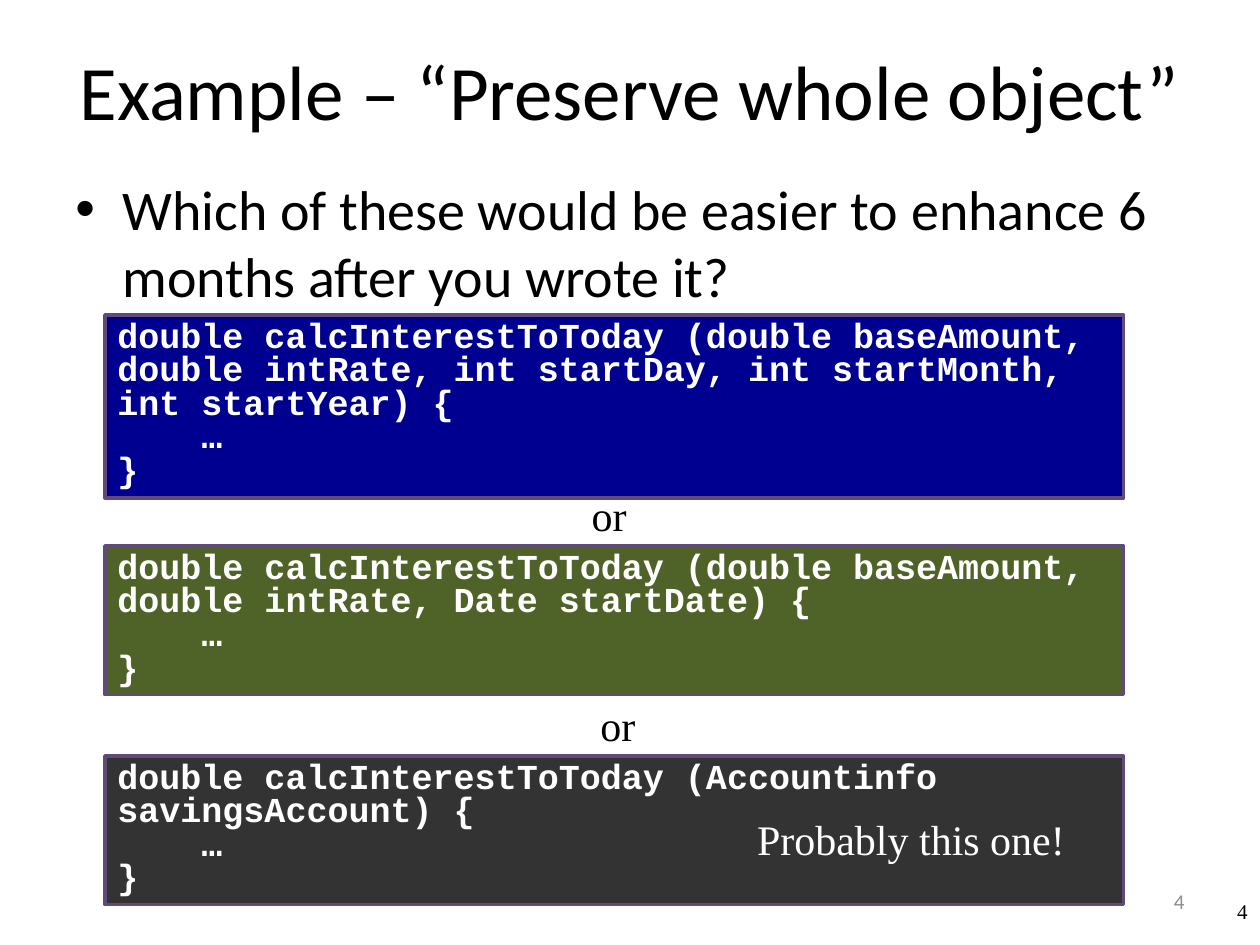
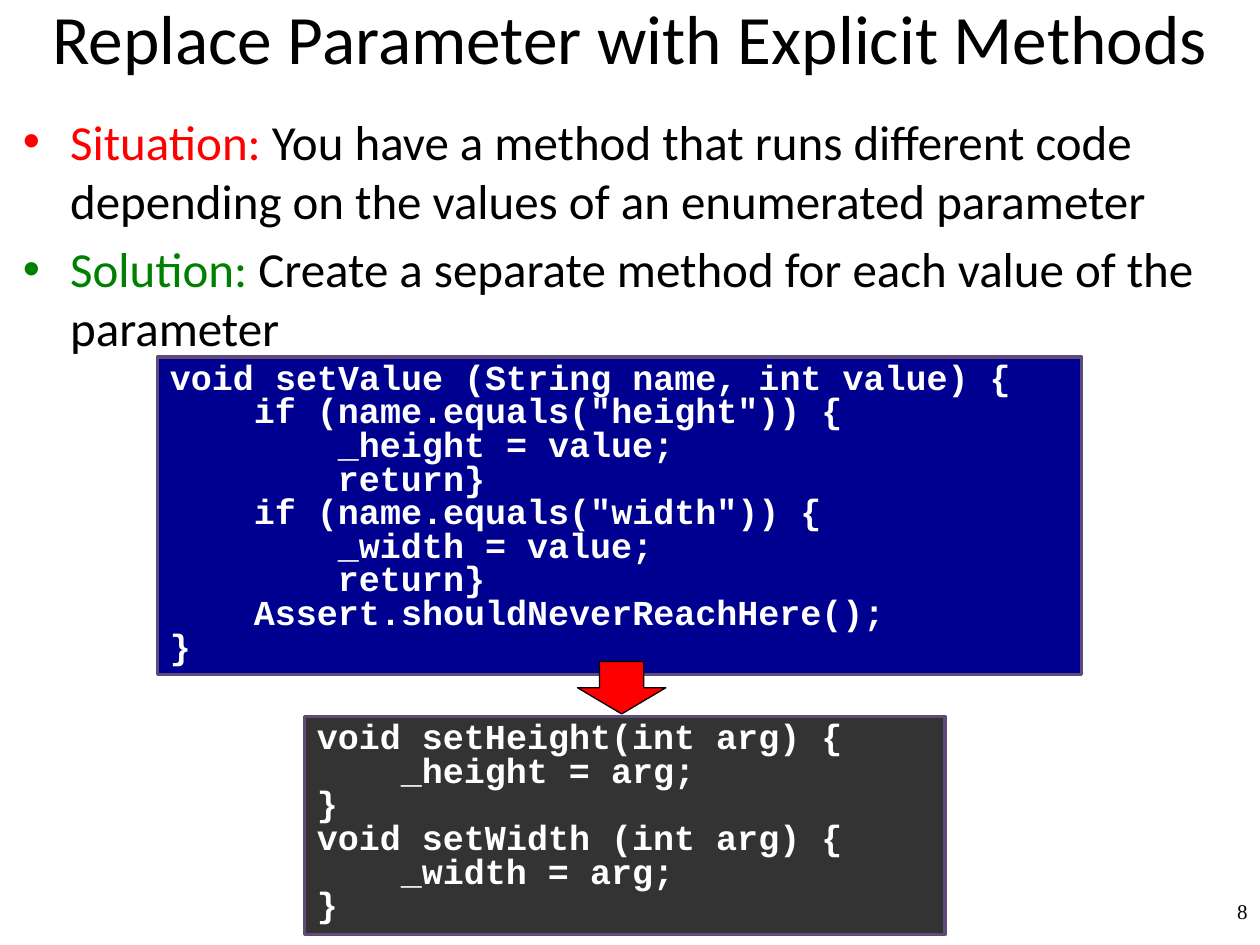
from dataclasses import dataclass

from lxml.etree import SubElement
from pptx import Presentation
from pptx.dml.color import RGBColor
from pptx.enum.shapes import MSO_SHAPE
from pptx.enum.text import MSO_ANCHOR, PP_ALIGN
from pptx.oxml.ns import qn
from pptx.shapes.autoshape import Shape
from pptx.slide import Slide
from pptx.util import Pt

COLORS = {
    "ink": "000000",
    "white": "FFFFFF",
    "page_gray": "8C8C8C",
    "code_border": "5F4A78",
    "blue": "000090",
    "green": "4F6228",
    "charcoal": "333333",
    "situation": "FF0000",
    "solution": "008000",
    "arrow": "FF0000",
}
BODY_FONT = "Calibri"
CODE_FONT = "Courier New"
NOTE_FONT = "Times New Roman"
CODE_SIZE = 20
CODE_INDENT = 48  # four characters of 20 pt code
BULLET_INDENT = 27


@dataclass(frozen=True)
class Box:
    left: float
    top: float
    width: float
    height: float

    def lengths(self) -> tuple[Pt, Pt, Pt, Pt]:
        return Pt(self.left), Pt(self.top), Pt(self.width), Pt(self.height)


@dataclass(frozen=True)
class Label:
    text: str
    box: Box
    size: float
    font: str = NOTE_FONT
    color: str = "ink"
    align: PP_ALIGN = PP_ALIGN.LEFT
    anchor: MSO_ANCHOR = MSO_ANCHOR.TOP
    wrap: bool = True


@dataclass(frozen=True)
class CodeBlock:
    box: Box
    fill: str
    lines: list[tuple[int, str]]  # indent level, code


@dataclass(frozen=True)
class Bullet:
    text: str
    lead: str = ""
    lead_color: str = "ink"


def rgb(name: str) -> RGBColor:
    return RGBColor.from_string(COLORS[name])


def style_font(font, name: str, size: float, color: str, bold: bool = False) -> None:
    font.name, font.size, font.bold = name, Pt(size), bold
    font.color.rgb = rgb(color)


def add_label(slide: Slide, label: Label) -> None:
    frame = slide.shapes.add_textbox(*label.box.lengths()).text_frame
    frame.word_wrap = label.wrap
    frame.vertical_anchor = label.anchor
    paragraph = frame.paragraphs[0]
    paragraph.text = label.text
    paragraph.alignment = label.align
    style_font(paragraph.font, label.font, label.size, label.color)


def add_title(slide: Slide, text: str, box: Box, size: float) -> None:
    add_label(slide, Label(text, box, size, BODY_FONT,
                           align=PP_ALIGN.CENTER, anchor=MSO_ANCHOR.MIDDLE))


def add_page_number(slide: Slide, number: int) -> None:
    add_label(slide, Label(str(number), Box(570, 510, 150, 30), 12, align=PP_ALIGN.RIGHT))


def add_bullets(slide: Slide, bullets: list[Bullet], box: Box, size: float) -> None:
    frame = slide.shapes.add_textbox(*box.lengths()).text_frame
    frame.word_wrap = True
    for index, bullet in enumerate(bullets):
        paragraph = frame.add_paragraph() if index else frame.paragraphs[0]
        paragraph.space_before = Pt(size * 0.2)
        style_font(paragraph.font, BODY_FONT, size, "ink")
        if bullet.lead:
            lead = paragraph.add_run()
            lead.text = bullet.lead
            lead.font.color.rgb = rgb(bullet.lead_color)
        paragraph.add_run().text = bullet.text

        # Hanging bullet in the colour of the lead
        properties = paragraph._p.get_or_add_pPr()
        properties.set("marL", str(Pt(BULLET_INDENT)))
        properties.set("indent", str(-Pt(BULLET_INDENT)))
        bullet_color = SubElement(properties, qn("a:buClr"))
        SubElement(bullet_color, qn("a:srgbClr"), val=COLORS[bullet.lead_color])
        SubElement(properties, qn("a:buFont"), typeface="Arial")
        SubElement(properties, qn("a:buChar"), char="•")
        # The schema wants the default run properties last
        properties.append(properties.find(qn("a:defRPr")))


def add_filled_shape(slide: Slide, preset: MSO_SHAPE, box: Box,
                     fill: str, line: str, line_width: float) -> Shape:
    shape = slide.shapes.add_shape(preset, *box.lengths())
    shape.shadow.inherit = False
    shape.fill.solid()
    shape.fill.fore_color.rgb = rgb(fill)
    shape.line.color.rgb = rgb(line)
    shape.line.width = Pt(line_width)
    return shape


def add_code(slide: Slide, code: CodeBlock) -> None:
    frame = add_filled_shape(slide, MSO_SHAPE.RECTANGLE, code.box,
                             code.fill, "code_border", 2).text_frame
    frame.word_wrap = True
    frame.vertical_anchor = MSO_ANCHOR.TOP
    for index, (level, text) in enumerate(code.lines):
        paragraph = frame.add_paragraph() if index else frame.paragraphs[0]
        paragraph.text = text
        paragraph.alignment = PP_ALIGN.LEFT
        paragraph.line_spacing = 0.8
        paragraph._p.get_or_add_pPr().set("marL", str(Pt(level * CODE_INDENT)))
        style_font(paragraph.font, CODE_FONT, CODE_SIZE, "white", bold=True)


def calc_interest(top: float, height: float, fill: str, parameters: str) -> CodeBlock:
    signature = f"double calcInterestToToday ({parameters}) {{"
    return CodeBlock(Box(60, top, 582, height), fill, [(0, signature), (1, "…"), (0, "}")])


def build_preserve_whole_object(slide: Slide) -> None:
    add_page_number(slide, 4)
    add_title(slide, "Example – “Preserve whole object”", Box(36, 6, 648, 90), 44)
    question = Bullet("Which of these would be easier to enhance 6 months after you wrote it?")
    add_bullets(slide, [question], Box(36, 96, 648, 356), 32)
    add_label(slide, Label("4", Box(516, 500.5, 168, 28.75), 12, BODY_FONT, "page_gray",
                           PP_ALIGN.RIGHT, MSO_ANCHOR.MIDDLE))

    # Three signatures to choose from
    for signature in (
        calc_interest(180, 104.5, "blue", "double baseAmount, double intRate, "
                      "int startDay, int startMonth, int startYear"),
        calc_interest(312, 85, "green", "double baseAmount, double intRate, Date startDate"),
        calc_interest(432, 85, "charcoal", "Accountinfo savingsAccount"),
    ):
        add_code(slide, signature)

    # Words between the signatures, and the answer
    for left, top in ((331, 276), (336, 396)):
        add_label(slide, Label("or", Box(left, top, 34.5, 36), 24, wrap=False))
    add_label(slide, Label("Probably this one!", Box(425.5, 461.5, 192, 36), 24,
                           color="white", wrap=False))


def build_explicit_methods(slide: Slide) -> None:
    add_page_number(slide, 8)
    add_title(slide, "Replace Parameter with Explicit Methods", Box(6, 0, 708, 42), 39.6)
    add_bullets(slide, [
        Bullet(" You have a method that runs different code depending on the values "
               "of an enumerated parameter", "Situation:", "situation"),
        Bullet(" Create a separate method for each value of the parameter",
               "Solution:", "solution"),
    ], Box(6, 60, 714, 444), 28)

    # Method before and after the refactoring
    add_code(slide, CodeBlock(Box(90, 204, 528, 181.5), "blue", [
        (0, "void setValue (String name, int value) {"),
        (1, 'if (name.equals("height")) {'),
        (2, "_height = value;"),
        (2, "return}"),
        (1, 'if (name.equals("width")) {'),
        (2, "_width = value;"),
        (2, "return}"),
        (1, "Assert.shouldNeverReachHere();"),
        (0, "}"),
    ]))
    add_code(slide, CodeBlock(Box(174, 409.5, 366, 124.5), "charcoal", [
        (0, "void setHeight(int arg) {"),
        (1, "_height = arg;"),
        (0, "}"),
        (0, "void setWidth (int arg) {"),
        (1, "_width = arg;"),
        (0, "}"),
    ]))
    add_filled_shape(slide, MSO_SHAPE.DOWN_ARROW, Box(330, 378, 50.5, 30),
                     "arrow", "ink", 0.75)


def main() -> None:
    deck = Presentation()
    deck.slide_width, deck.slide_height = Pt(720), Pt(540)
    blank = deck.slide_layouts[6]
    for build in (build_preserve_whole_object, build_explicit_methods):
        build(deck.slides.add_slide(blank))
    deck.save("out.pptx")


if __name__ == "__main__":
    main()
